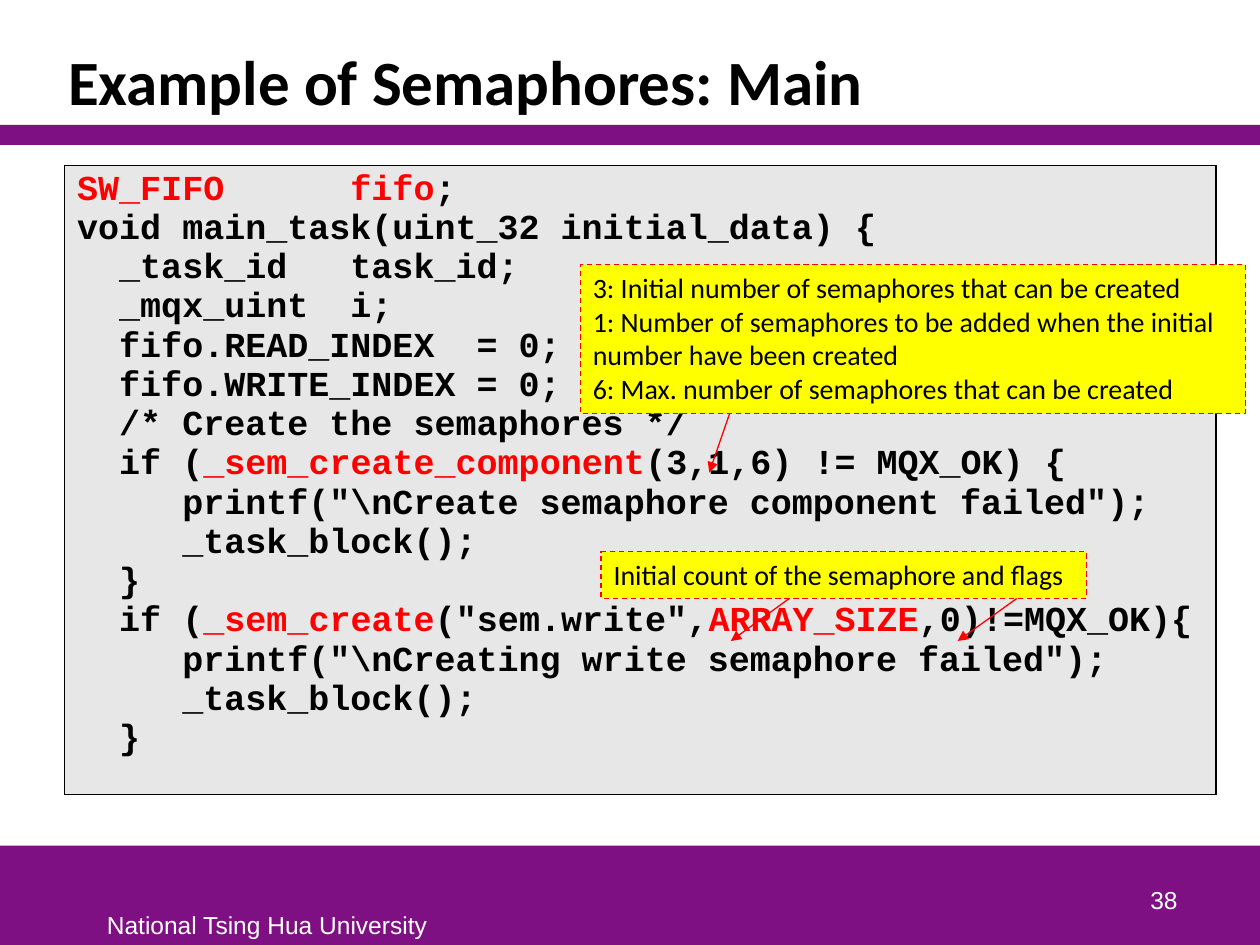
from lxml import etree
from pptx import Presentation
from pptx.dml.color import RGBColor
from pptx.enum.dml import MSO_LINE
from pptx.enum.shapes import MSO_CONNECTOR, MSO_SHAPE
from pptx.enum.text import MSO_ANCHOR, MSO_AUTO_SIZE, PP_ALIGN
from pptx.oxml import parse_xml
from pptx.oxml.ns import qn
from pptx.util import Pt

RECTANGLE = MSO_SHAPE.RECTANGLE
STRAIGHT = MSO_CONNECTOR.STRAIGHT
DASH = MSO_LINE.DASH
BOTTOM = MSO_ANCHOR.BOTTOM
TOP = MSO_ANCHOR.TOP
LEFT = PP_ALIGN.LEFT
RIGHT = PP_ALIGN.RIGHT
NO_FIT = MSO_AUTO_SIZE.NONE

COLORS = {
    "purple": "7F1084",
    "white": "FFFFFF",
    "black": "000000",
    "red": "FF0000",
    "yellow": "FFFF00",
    "gray": "E7E7E7",
}
DRAWING_NS = "http://schemas.openxmlformats.org/drawingml/2006/main"


def color(name):
    return RGBColor.from_string(COLORS[name])


def add_run(paragraph, text, font_name, size, color_name="black", bold=False):
    run = paragraph.add_run()
    run.text = text
    run.font.name = font_name
    run.font.size = Pt(size)
    run.font.bold = bold
    run.font.color.rgb = color(color_name)


deck = Presentation()
deck.slide_width = Pt(720)
deck.slide_height = Pt(540)
slide = deck.slides.add_slide(deck.slide_layouts[5])
shapes = slide.shapes

for band_top, band_height in [(483.3, 56.7), (71.4, 11.4)]:
    band = shapes.add_shape(RECTANGLE, 0, Pt(band_top), Pt(720), Pt(band_height))
    band.shadow.inherit = False
    band.fill.solid()
    band.fill.fore_color.rgb = color("purple")
    band.line.fill.background()

title = shapes.title
title.left, title.top, title.width, title.height = Pt(31.7), Pt(18), Pt(646), Pt(53.3)
title.text_frame.auto_size = NO_FIT
title.text_frame.vertical_anchor = BOTTOM
heading = title.text_frame.paragraphs[0]
heading.alignment = LEFT
heading.line_spacing = 0.85
add_run(heading, "Example of Semaphores: Main", "Calibri", 36, bold=True)

footers = [
    ("National Tsing Hua University", 54, 516.3, 199, 24, LEFT, TOP),
    ("38", 530, 490.3, 150, 36, RIGHT, BOTTOM),
]
for text, left, top, width, height, alignment, anchor in footers:
    footer = shapes.add_textbox(Pt(left), Pt(top), Pt(width), Pt(height))
    footer.text_frame.word_wrap = True
    footer.text_frame.vertical_anchor = anchor
    footer_line = footer.text_frame.paragraphs[0]
    footer_line.alignment = alignment
    add_run(footer_line, text, "Arial", 14, "white")

code_lines = [
    [("SW_FIFO      fifo", "red"), (";", "black")],
    [("void main_task(uint_32 initial_data) {", "black")],
    [("  _task_id   task_id;", "black")],
    [("  _mqx_uint  i;", "black")],
    [("  fifo.READ_INDEX  = 0;", "black")],
    [("  fifo.WRITE_INDEX = 0;", "black")],
    [("  /* Create the semaphores */", "black")],
    [("  if (", "black"), ("_sem_create_component", "red"), ("(3,1,6) != MQX_OK) {", "black")],
    [(r'     printf("\nCreate semaphore component failed");', "black")],
    [("     _task_block();", "black")],
    [("  }", "black")],
    [("  if (", "black"), ("_sem_create", "red"), ('("sem.write",', "black"),
     ("ARRAY_SIZE", "red"), (",0)!=MQX_OK){", "black")],
    [(r'     printf("\nCreating write semaphore failed");', "black")],
    [("     _task_block();", "black")],
    [("  }", "black")],
]
listing = shapes.add_table(1, 1, Pt(36.9), Pt(94.5), Pt(658), Pt(329)).table
listing.first_row = False
listing.horz_banding = False
code_cell = listing.cell(0, 0)
cell_properties = code_cell._tc.get_or_add_tcPr()
for side in ("lnL", "lnR", "lnT", "lnB"):
    cell_properties.append(parse_xml(
        f'<a:{side} xmlns:a="{DRAWING_NS}" w="12700"><a:solidFill>'
        f'<a:srgbClr val="{COLORS["black"]}"/></a:solidFill></a:{side}>'
    ))
code_cell.fill.solid()
code_cell.fill.fore_color.rgb = color("gray")
code_frame = code_cell.text_frame
for number, pieces in enumerate(code_lines):
    code_line = code_frame.add_paragraph() if number else code_frame.paragraphs[0]
    code_line.line_spacing = 0.9
    code_line.space_before = Pt(2 if number else 0)
    for text, color_name in pieces:
        add_run(code_line, text, "Courier New", 20, color_name, bold=True)

callouts = [
    (331.7, 151.2, 380, 85, [
        "3: Initial number of semaphores that can be created",
        "1: Number of semaphores to be added when the initial number have been created",
        "6: Max. number of semaphores that can be created",
    ], [(417, 236.2, 405.3, 270)]),
    (343.5, 315.2, 277.3, 26.8, [
        "Initial count of the semaphore and flags",
    ], [(451, 342, 417.6, 366.3), (581, 342, 547.2, 366.3)]),
]
for left, top, width, height, notes, arrows in callouts:
    callout = shapes.add_shape(RECTANGLE, Pt(left), Pt(top), Pt(width), Pt(height))
    callout.shadow.inherit = False
    callout.fill.solid()
    callout.fill.fore_color.rgb = color("yellow")
    callout.line.color.rgb = color("red")
    callout.line.width = Pt(0.75)
    callout.line.dash_style = DASH
    callout_frame = callout.text_frame
    callout_frame.word_wrap = True
    callout_frame.vertical_anchor = TOP
    for number, note in enumerate(notes):
        note_line = callout_frame.add_paragraph() if number else callout_frame.paragraphs[0]
        note_line.alignment = LEFT
        add_run(note_line, note, "Calibri", 16)

    for start_x, start_y, end_x, end_y in arrows:
        arrow = shapes.add_connector(STRAIGHT, Pt(start_x), Pt(start_y), Pt(end_x), Pt(end_y))
        arrow.line.color.rgb = color("red")
        arrow.line.width = Pt(0.75)
        etree.SubElement(arrow.line._get_or_add_ln(), qn("a:tailEnd"), type="triangle")
        etree.SubElement(arrow._element.spPr, qn("a:effectLst"))

deck.save("out.pptx")
